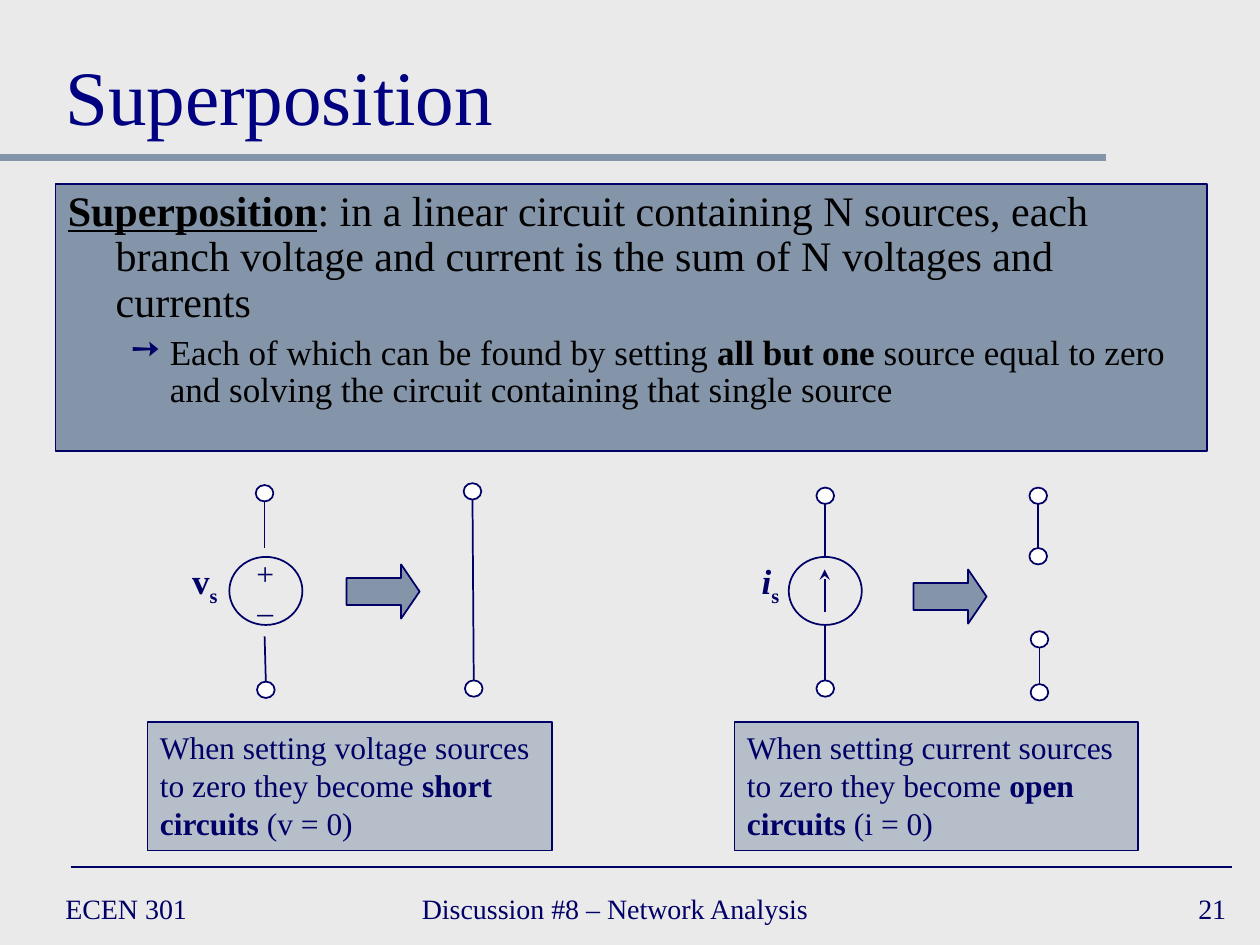
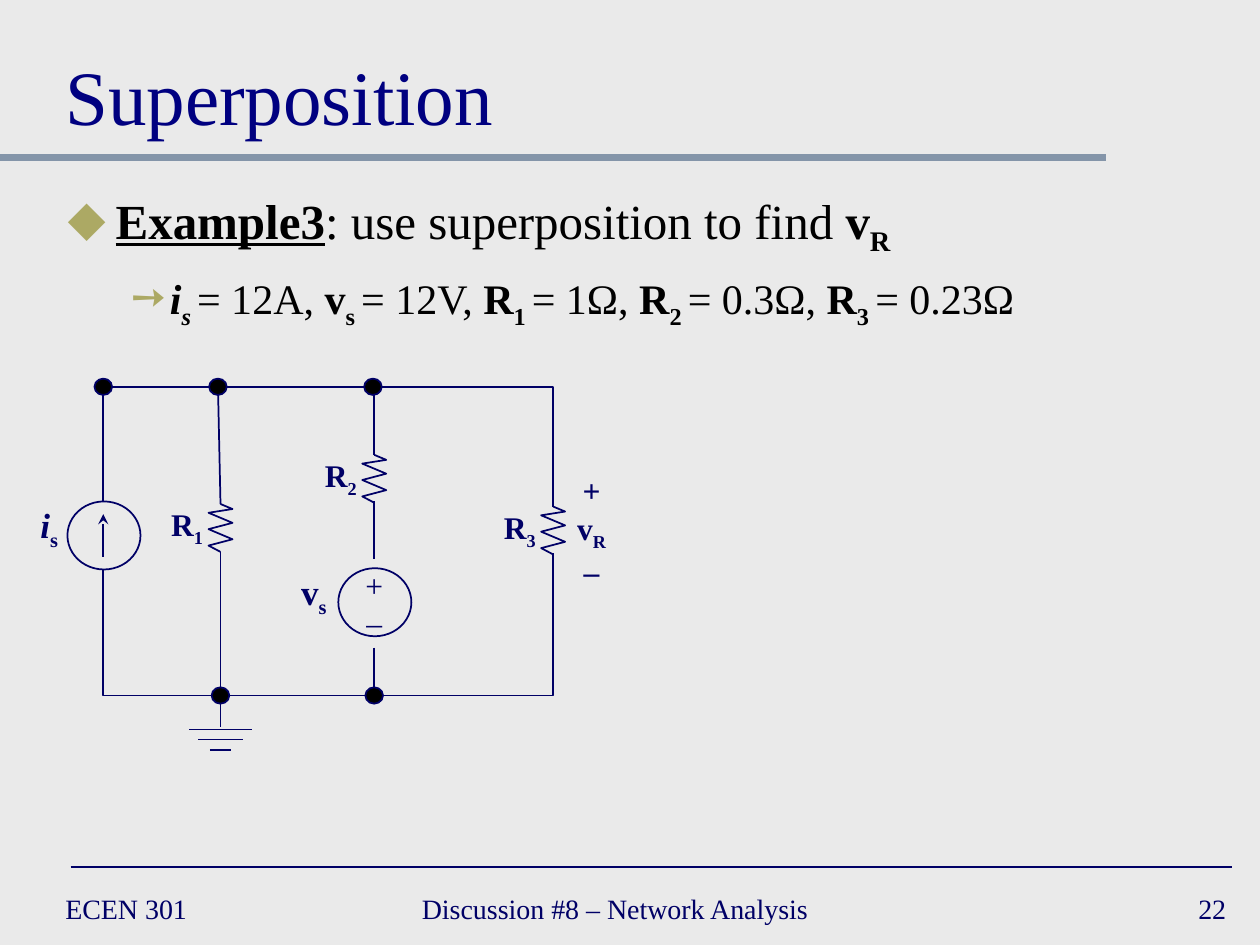
from dataclasses import dataclass

from lxml.etree import SubElement
from pptx import Presentation
from pptx.dml.color import RGBColor
from pptx.enum.shapes import MSO_CONNECTOR, MSO_SHAPE
from pptx.enum.text import MSO_ANCHOR, PP_ALIGN
from pptx.oxml.ns import qn
from pptx.util import Inches, Pt

COLORS = {
    "background": "EAEAEA", "title": "000080", "ink": "000066", "steel": "8495A9",
    "olive": "ACA964", "black": "000000", "white": "FFFFFF",
}
FONT = "Times New Roman"
COLUMNS, ROWS = 100, 75
CELL = Inches(0.1)


@dataclass
class Box:
    """An area measured in grid columns and rows."""
    left: float
    top: float
    width: float
    height: float

    def inside(self, x, y, width, height):
        return Box(self.left + x, self.top + y, width, height)

    def point(self, x, y):
        return round((self.left + x) * CELL), round((self.top + y) * CELL)

    def frame(self):
        return *self.point(0, 0), round(self.width * CELL), round(self.height * CELL)


PAGE = Box(0, 0, COLUMNS, ROWS)


def rgb(name):
    return RGBColor.from_string(COLORS[name])


# Text: runs are (text, marks) pairs; marks are b bold, i italic, u underline, _ subscript
def write(paragraph, runs, size, color="ink", align=PP_ALIGN.LEFT):
    paragraph.alignment = align
    font = paragraph.font
    font.name, font.size, font.color.rgb = FONT, Pt(size), rgb(color)
    for text, marks in runs:
        run = paragraph.add_run()
        run.text = text
        if "b" in marks:
            run.font.bold = True
        if "i" in marks:
            run.font.italic = True
        if "u" in marks:
            run.font.underline = True
        if "_" in marks:
            run.font._element.set("baseline", "-25000")


def add_text(slide, box, lines, size, color="ink", align=PP_ALIGN.LEFT,
             anchor=MSO_ANCHOR.TOP, wrap=True):
    frame = slide.shapes.add_textbox(*box.frame()).text_frame
    frame.word_wrap, frame.vertical_anchor = wrap, anchor
    for number, runs in enumerate(lines):
        paragraph = frame.add_paragraph() if number else frame.paragraphs[0]
        write(paragraph, runs, size, color, align)


def add_label(slide, box, lines, size):
    add_text(slide, box, lines, size, align=PP_ALIGN.CENTER, wrap=False)


def indent(paragraph, margin, hanging, bullet=None, bullet_color="ink"):
    properties = paragraph._p.get_or_add_pPr()
    properties.set("marL", str(Inches(margin)))
    properties.set("indent", str(-Inches(hanging)))
    if bullet:
        color = SubElement(properties, qn("a:buClr"))
        SubElement(color, qn("a:srgbClr")).set("val", COLORS[bullet_color])
        SubElement(properties, qn("a:buChar")).set("char", bullet)
    else:
        SubElement(properties, qn("a:buNone"))


# Drawing primitives
def outline(shape, fill=None, width=1):
    shape.shadow.inherit = False
    shape.line.color.rgb, shape.line.width = rgb("ink"), Pt(width)
    if fill:
        shape.fill.solid()
        shape.fill.fore_color.rgb = rgb(fill)
    else:
        shape.fill.background()


def add_outlined(slide, kind, box, fill=None, width=1):
    shape = slide.shapes.add_shape(kind, *box.frame())
    outline(shape, fill, width)
    return shape


def add_wire(slide, box, start, end, color="ink", width=1, arrow=False):
    wire = slide.shapes.add_connector(
        MSO_CONNECTOR.STRAIGHT, *box.point(*start), *box.point(*end))
    wire.line.color.rgb, wire.line.width = rgb(color), Pt(width)
    if arrow:
        SubElement(wire.line._get_or_add_ln(), qn("a:tailEnd")).set("type", "stealth")
    SubElement(wire._element.spPr, qn("a:effectLst"))


def add_path(slide, box, points):
    first, *rest = [box.point(*point) for point in points]
    builder = slide.shapes.build_freeform(*first)
    builder.add_line_segments(rest, close=False)
    outline(builder.convert_to_shape())


def add_node(slide, box, center, fill):
    x, y = center
    add_outlined(slide, MSO_SHAPE.OVAL, box.inside(x - 0.7, y - 0.65, 1.4, 1.3), fill)


# Circuit symbols: the box of a source is that of its circle
def add_voltage_source(slide, box):
    add_label(slide, box.inside(-4, -0.3, 4.1, 4.3), [[("v", "b"), ("s", "b_")]], 20)
    add_outlined(slide, MSO_SHAPE.OVAL, box)
    add_label(slide, box.inside(1.15, -0.7, 3.4, 7), [[("+", "")], [("–", "")]], 18)


def add_current_source(slide, box):
    add_label(slide, box.inside(-3.2, -0.3, 3.5, 4.3), [[("i", "bi"), ("s", "b_")]], 20)
    add_outlined(slide, MSO_SHAPE.OVAL, box)
    add_wire(slide, box, (2.85, 4.4), (2.85, 1), arrow=True)


def add_resistor(slide, box, number):
    right, middle = box.width, box.width / 2
    add_path(slide, box, [(middle, 0), (right, 0.4), (0, 0.7), (right, 1.5), (0, 2),
                          (right, 2.8), (0, 3.3), (middle, box.height)])
    add_label(slide, box.inside(-4.05, -0.4, 4.7, 4), [[("R", "b"), (number, "b_")]], 18)


def add_ground(slide, box):
    center = box.width / 2
    add_wire(slide, box, (center, 0), (center, 2.5))
    for level, half in enumerate((2.5, 1.75, 0.85)):
        y = 2.7 + 0.8 * level
        add_wire(slide, box, (center - half, y), (center + half, y))


# Shared title, rules and footer
def start_slide(deck, title, number):
    slide = deck.slides.add_slide(deck.slide_layouts[6])
    slide.background.fill.solid()
    slide.background.fill.fore_color.rgb = rgb("background")
    add_wire(slide, PAGE, (0, 12.5), (87.8, 12.5), "steel", 4)
    add_wire(slide, PAGE, (5.6, 68.8), (97.8, 68.8))
    footer = PAGE.inside(4.2, 70, 94.1, 4.2)
    for x, width, text, align in (
            (0, 21.7, "ECEN 301", PP_ALIGN.LEFT),
            (28.3, 38.3, "Discussion #8 – Network Analysis", PP_ALIGN.LEFT),
            (73.3, 20.8, number, PP_ALIGN.RIGHT)):
        add_text(slide, footer.inside(x, 0, width, 4.2), [[(text, "")]], 16,
                 align=align, anchor=MSO_ANCHOR.MIDDLE)
    add_text(slide, PAGE.inside(4.2, 1.7, 91.7, 10), [[(title, "")]], 44, "title",
             anchor=MSO_ANCHOR.BOTTOM)
    return slide


def fill_body(frame, heading, heading_size, detail, detail_size, gap,
              bullets, bullet_color, spacing=1.0):
    frame.word_wrap, frame.vertical_anchor = True, MSO_ANCHOR.TOP
    first, second = frame.paragraphs[0], frame.add_paragraph()
    indent(first, 0.38, 0.38, bullets[0], bullet_color)
    indent(second, 0.81, 0.31, bullets[1], bullet_color)
    second.space_before = Pt(gap)
    first.line_spacing = second.line_spacing = spacing
    write(first, heading, heading_size, "black")
    write(second, detail, detail_size, "black")


# Slide 1 regions
def add_definition(slide, box):
    panel = add_outlined(slide, MSO_SHAPE.RECTANGLE, box, "steel", 0.75)
    fill_body(
        panel.text_frame,
        [("Superposition", "bu"),
         (": in a linear circuit containing N sources, each branch voltage and current "
          "is the sum of N voltages and currents", "")], 24,
        [("Each of which can be found by setting ", ""), ("all but one", "b"),
         (" source equal to zero and solving the circuit containing that single source", "")],
        20, 5, (None, "➙"), "ink", 0.9)


def add_caption(slide, box, kind, result, zero):
    caption = add_outlined(slide, MSO_SHAPE.RECTANGLE, box, "steel")
    tint = caption._element.spPr.find(qn("a:solidFill"))[0]
    SubElement(tint, qn("a:alpha")).set("val", "50000")
    caption.text_frame.word_wrap = True
    caption.text_frame.vertical_anchor = MSO_ANCHOR.TOP
    write(caption.text_frame.paragraphs[0],
          [(f"When setting {kind} sources to zero they become ", ""),
           (result, "b"), (f" ({zero} = 0)", "")], 18)


def add_equivalence(slide, box, source, source_x, arrow_spot, wires, terminals, caption):
    source(slide, box.inside(source_x, 5.9, 5.8, 5.4))
    for start, end in wires:
        add_wire(slide, box, start, end)
    for center in terminals:
        add_node(slide, box, center, "white")
    arrow = add_outlined(slide, MSO_SHAPE.RIGHT_ARROW, box.inside(*arrow_spot, 5.8, 4.3), "steel")
    arrow.adjustments[0], arrow.adjustments[1] = 0.5, 0.34
    add_caption(slide, box.inside(0, 19, box.width, 10.2), *caption)


def build_principle(deck):
    slide = start_slide(deck, "Superposition", "21")
    add_definition(slide, PAGE.inside(4.4, 14.6, 91.4, 21.2))
    # Voltage source becomes a short circuit
    add_equivalence(
        slide, PAGE.inside(11.7, 38.3, 32.1, 29.2), add_voltage_source, 6.5, (15.8, 6.5),
        [((9.3, 1.5), (9.3, 5.2)), ((9.4, 15.8), (9.3, 12.2)), ((25.8, 1.4), (25.9, 15.7))],
        [(9.3, 0.85), (9.4, 16.45), (25.8, 0.7), (25.9, 16.35)],
        ("voltage", "short circuits", "v"))
    # Current source becomes an open circuit
    add_equivalence(
        slide, PAGE.inside(58.3, 38.3, 32, 29.2), add_current_source, 4.3, (14.2, 6.9),
        [((7.2, 1.7), (7.2, 5.9)), ((7.2, 15.7), (7.2, 11.3)),
         ((24.1, 1.7), (24.1, 5.2)), ((24.2, 16), (24.2, 13.1))],
        [(7.2, 1.05), (7.2, 16.35), (24.1, 1.05), (24.1, 5.85), (24.2, 12.45), (24.2, 16.65)],
        ("current", "open circuits", "i"))


# Slide 2 regions
def add_task(slide, box):
    detail = [("i", "bi"), ("s ", "bi_"), ("= 12A, ", ""),
              ("v", "b"), ("s ", "b_"), ("= 12V, ", "")]
    for number, value in (("1 ", "= 1Ω, "), ("2 ", "= 0.3Ω, "), ("3 ", "= 0.23Ω")):
        detail += [("R", "b"), (number, "b_"), (value, "")]
    task = slide.shapes.add_textbox(*box.frame())
    fill_body(task.text_frame,
              [("Example3", "bu"), (": use superposition to find ", ""),
               ("v", "b"), ("R", "b_")], 28, detail, 24, 9, ("◆", "➙"), "olive")


def add_circuit(slide, box):
    top, bottom = 0.7, 25.2
    source_x, r1_x, r2_x, r3_x = 6, 15.3, 27.5, 41.7
    # Wires
    add_wire(slide, box, (source_x, top), (r2_x, top))
    add_wire(slide, box, (source_x, top), (source_x, 9.8))
    add_wire(slide, box, (r1_x - 0.2, top), (r1_x, 10))
    add_wire(slide, box, (r1_x, 13.8), (r1_x, bottom))
    add_wire(slide, box, (r2_x, top), (r2_x, 6.1))
    add_wire(slide, box, (r2_x, 9.8), (r2_x, 14.4))
    add_wire(slide, box, (r2_x, 21.4), (r2_x, bottom))
    add_wire(slide, box, (r1_x, bottom), (r2_x, bottom))
    add_path(slide, box, [(r1_x, bottom), (source_x, bottom), (source_x, 15.2)])
    add_path(slide, box, [(r2_x, top), (r3_x, top), (r3_x, 10.2)])
    add_path(slide, box, [(r2_x, bottom), (r3_x, bottom), (r3_x, 13.9)])
    # Sources, resistors and ground
    add_current_source(slide, box.inside(source_x - 2.85, 9.8, 5.8, 5.4))
    add_voltage_source(slide, box.inside(r2_x - 2.85, 15.1, 5.8, 5.4))
    for number, x, y in (("1", r1_x, 10), ("2", r2_x, 6.1), ("3", r3_x, 10.2)):
        add_resistor(slide, box.inside(x - 0.95, y, 1.9, 3.8), number)
    add_ground(slide, box.inside(r1_x - 2.5, bottom, 5, 4.3))
    add_label(slide, box.inside(42.5, 6.9, 4.5, 10),
              [[("+", "b")], [("v", "b"), ("R", "b_")], [("–", "b")]], 18)
    # Junctions
    for center in ((source_x, top), (r1_x - 0.2, top), (r2_x - 0.1, top),
                   (r1_x, bottom), (r2_x, bottom)):
        add_node(slide, box, center, "black")


def build_example(deck):
    slide = start_slide(deck, "Superposition", "22")
    add_task(slide, PAGE.inside(4.4, 14.6, 91.4, 15.4))
    add_circuit(slide, PAGE.inside(2.2, 30, 47, 29.5))


def main():
    deck = Presentation()
    deck.slide_width, deck.slide_height = COLUMNS * CELL, ROWS * CELL
    build_principle(deck)
    build_example(deck)
    deck.save("out.pptx")


if __name__ == "__main__":
    main()
